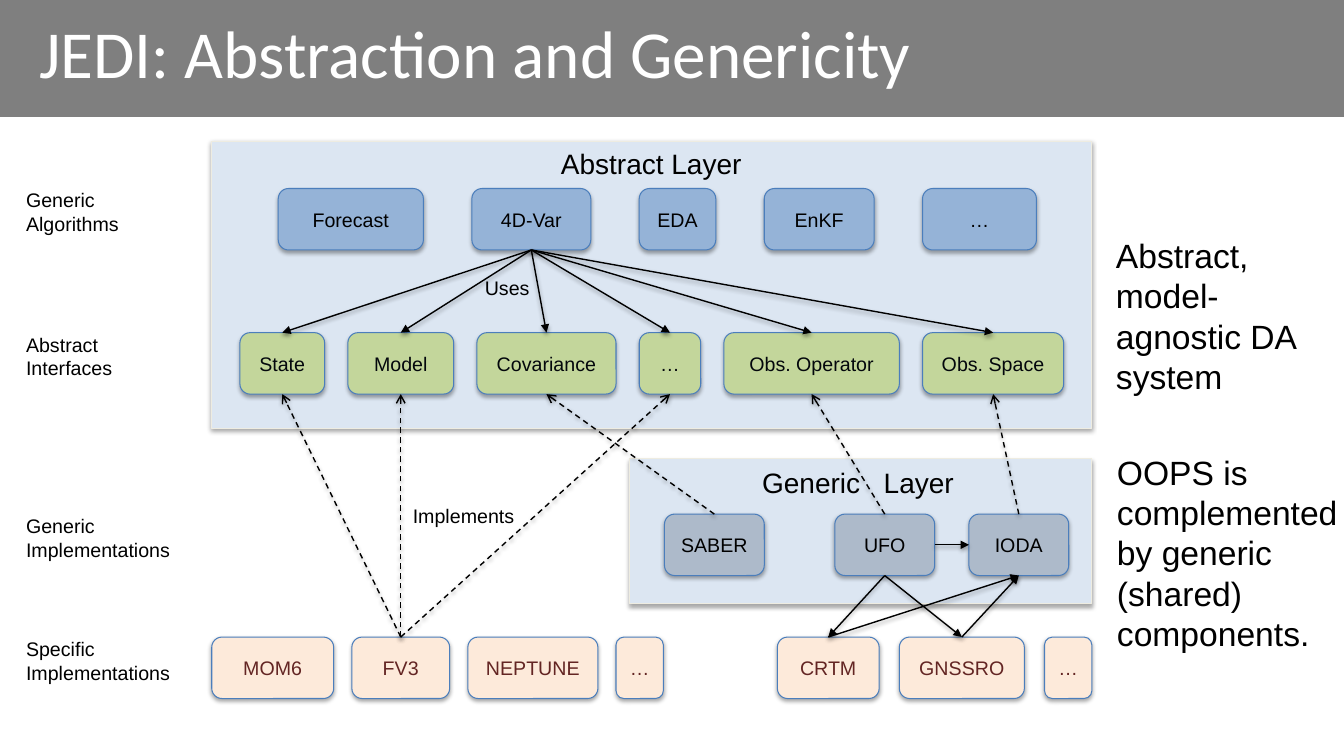
from lxml import etree
from pptx import Presentation
from pptx import util as u
from pptx.dml.color import RGBColor
from pptx.enum import dml, shapes, text
from pptx.oxml import ns

Inches, Pt = u.Inches, u.Pt
COLORS = {
    "black": "000000", "white": "FFFFFF", "panel": "DCE6F2",
    "panel_line": "EEECE1", "box_line": "4B7EBC", "algorithm": "95B3D7",
    "interface": "C3D69B", "interface_text": "03070C", "generic": "ADBACA",
    "specific": "FDEADA", "specific_text": "632523",
}
BOX_H = 0.61
TOP, BOTTOM, RIGHT, LEFT = 0, 2, 3, 1  # connection sites


def rgb(name):
    return RGBColor.from_string(COLORS[name])


def child(parent, tag, **attrs):
    return etree.SubElement(parent, ns.qn(tag), {k: str(v) for k, v in attrs.items()})


def add_shadow(spPr, alpha, dist):
    effects = child(spPr, "a:effectLst")
    shadow = child(effects, "a:outerShdw", blurRad=Pt(3.1), dist=Pt(dist),
                   dir=90 * 60000, rotWithShape=0)
    color = child(shadow, "a:srgbClr", val=COLORS["black"])
    child(color, "a:alpha", val=alpha * 1000)


def format_text(tf, size, color="black", font="Arial", align=None):
    for p in tf.paragraphs:
        p.alignment = align
        for r in p.runs:
            r.font.size, r.font.name = Pt(size), font
            r.font.color.rgb = rgb(color)


def add_text(s, box, words, size=14, align=None):
    sp = s.shapes.add_textbox(*map(Inches, box))
    tf = sp.text_frame
    tf.word_wrap = True
    tf.text = words
    format_text(tf, size, align=align)
    return tf


def add_block(s, kind, box, fill, line):
    sp = s.shapes.add_shape(kind, *map(Inches, box))
    sp.fill.solid()
    sp.fill.fore_color.rgb = rgb(fill)
    sp.line.color.rgb = rgb(line)
    sp.line.width = Pt(0.75)
    add_shadow(sp._element.spPr, 35, 1.8)
    return sp


def add_panel(s, box):
    add_block(s, shapes.MSO_SHAPE.RECTANGLE, box, "panel", "panel_line")


def add_row(s, x, y, gap, items, fill, color="black"):
    """Lay labelled boxes from left to right and return them by label."""
    row = {}
    for label, width in items:
        sp = add_block(s, shapes.MSO_SHAPE.ROUNDED_RECTANGLE,
                       (x, y, width, BOX_H), fill, "box_line")
        tf = sp.text_frame
        tf.text = label
        tf.vertical_anchor = text.MSO_ANCHOR.MIDDLE
        format_text(tf, 14, color, align=text.PP_ALIGN.CENTER)
        row[label] = sp
        x += width + gap
    return row


def add_arrow(s, start, start_site, end, end_site, dashed=False):
    c = s.shapes.add_connector(shapes.MSO_CONNECTOR.STRAIGHT, 0, 0, 0, 0)
    c.begin_connect(start, start_site)
    c.end_connect(end, end_site)
    c.line.color.rgb = rgb("black")
    c.line.width = Pt(1)
    if dashed:
        c.line.dash_style = dml.MSO_LINE.DASH
    child(c.line._get_or_add_ln(), "a:tailEnd", type="arrow" if dashed else "triangle")
    add_shadow(c._element.spPr, 38, 1.6)


def title_band(s, box):
    x, y, w, h = box
    band = s.shapes.add_shape(shapes.MSO_SHAPE.RECTANGLE, *map(Inches, box))
    band.shadow.inherit = False
    band.fill.solid()
    band.fill.fore_color.rgb = rgb("black")
    child(band._element.spPr.find(".//" + ns.qn("a:srgbClr")), "a:alpha", val=50000)
    band.line.fill.background()
    s.shapes._spTree.insert(2, band._element)  # behind the title

    title = s.shapes.title
    title.left, title.top, title.width, title.height = map(
        Inches, (x + 0.26, y, 11.12, h - 0.14))
    tf = title.text_frame
    tf.text = "JEDI: Abstraction and Genericity"
    tf.auto_size = text.MSO_AUTO_SIZE.NONE
    tf.vertical_anchor = text.MSO_ANCHOR.MIDDLE
    tf.margin_left = tf.margin_right = Inches(0.13)
    tf.margin_top = tf.margin_bottom = Inches(0.07)
    format_text(tf, 48, "white", "Calibri", text.PP_ALIGN.LEFT)


def generic_layer(s, box):
    x, y, w, h = box
    add_panel(s, box)
    tf = add_text(s, (x + 0.94, y + 0.02, 2.66, 0.44), "Generic", 20)
    p = tf.paragraphs[0]
    for part in (" ", "Layer"):
        p.add_run().text = part
    format_text(tf, 20, align=text.PP_ALIGN.CENTER)
    p.runs[1]._r.get_or_add_rPr().set("spc", "1110")  # wide word gap
    row = add_row(s, x + 0.35, y + 0.55, 0, [("SABER", 0.99)], "generic")
    row.update(add_row(s, x + 2.04, y + 0.55, 0.34,
                       [("UFO", 0.99), ("IODA", 0.99)], "generic"))
    return row


def abstract_layer(s, box):
    x, y, w, h = box
    add_panel(s, box)
    add_text(s, (x + 2.14, y, 4.44, 0.44), "Abstract Layer", 20, text.PP_ALIGN.CENTER)
    algorithms = add_row(s, x + 0.66, y + 0.47, 0.48, [
        ("Forecast", 1.44), ("4D-Var", 1.18), ("EDA", 0.76),
        ("EnKF", 1.09), ("…", 1.13)], "algorithm")
    interfaces = add_row(s, x + 0.28, y + 1.9, 0.23, [
        ("State", 0.84), ("Model", 1.05), ("Covariance", 1.38), ("…", 0.61),
        ("Obs. Operator", 1.74), ("Obs. Space", 1.4)], "interface", "interface_text")
    return algorithms, interfaces


def specific_implementations(s, box):
    x, y, w, h = box
    colors = ("specific", "specific_text")
    models = add_row(s, x, y, 0.18, [
        ("MOM6", 1.21), ("FV3", 0.97), ("NEPTUNE", 1.29), ("…", 0.47)], *colors)
    operators = add_row(s, x + 5.61, y, 0.2, [
        ("CRTM", 1.01), ("GNSSRO", 1.24), ("…", 0.47)], *colors)
    return models, operators


def relations(s, algorithms, interfaces, generic, models, operators):
    # Uses
    for target in interfaces.values():
        add_arrow(s, algorithms["4D-Var"], BOTTOM, target, TOP)
    add_arrow(s, generic["UFO"], RIGHT, generic["IODA"], LEFT)
    for name in ("CRTM", "GNSSRO"):
        add_arrow(s, generic["UFO"], BOTTOM, operators[name], TOP)
        add_arrow(s, operators[name], TOP, generic["IODA"], BOTTOM)
    # Implements
    sources = [(models["FV3"], name) for name in ("State", "Model", "…")]
    sources += [(generic["SABER"], "Covariance"), (generic["UFO"], "Obs. Operator"),
                (generic["IODA"], "Obs. Space")]
    for source, name in sources:
        add_arrow(s, source, TOP, interfaces[name], BOTTOM, dashed=True)
    add_text(s, (4.71, 2.69, 0.85, 0.34), "Uses")
    add_text(s, (3.53, 4.95, 1.67, 0.34), "Implements", align=text.PP_ALIGN.RIGHT)


def row_labels(s, box):
    x, y, w, h = box
    for dy, width, words in [
            (0, 1.54, "Generic Algorithms"), (1.43, 1.54, "Abstract Interfaces"),
            (3.23, w, "Generic Implementations"), (4.45, w, "Specific Implementations")]:
        add_text(s, (x, y + dy, width, 0.57), words)


def side_notes(s, box):
    x, y, w, h = box
    add_text(s, (x, y, 2.2, 1.72), "Abstract, model-agnostic DA system", 24)
    add_text(s, (x + 0.01, y + 2.15, w, 2.12),
             "OOPS is complemented by generic (shared) components.", 24)


def main():
    prs = Presentation()
    prs.slide_width, prs.slide_height = Inches(13.33), Inches(7.5)
    s = prs.slides.add_slide(prs.slide_layouts[5])
    title_band(s, (0, 0, 13.33, 1.16))
    generic = generic_layer(s, (6.24, 4.55, 4.59, 1.44))
    algorithms, interfaces = abstract_layer(s, (2.1, 1.4, 8.73, 2.85))
    models, operators = specific_implementations(s, (2.1, 6.32, 8.73, BOX_H))
    relations(s, algorithms, interfaces, generic, models, operators)
    row_labels(s, (0.16, 1.82, 1.94, 5.02))
    side_notes(s, (10.97, 2.28, 2.39, 4.27))
    prs.save("out.pptx")


if __name__ == "__main__":
    main()
